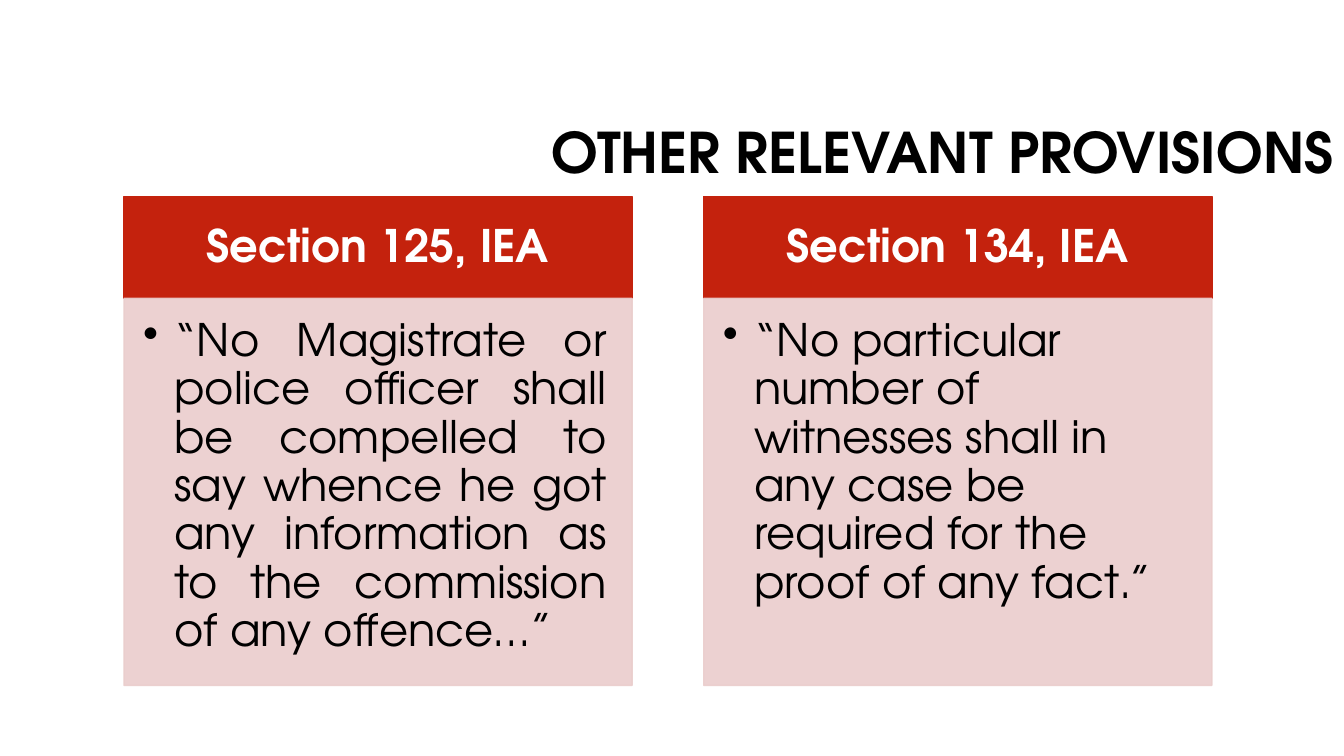
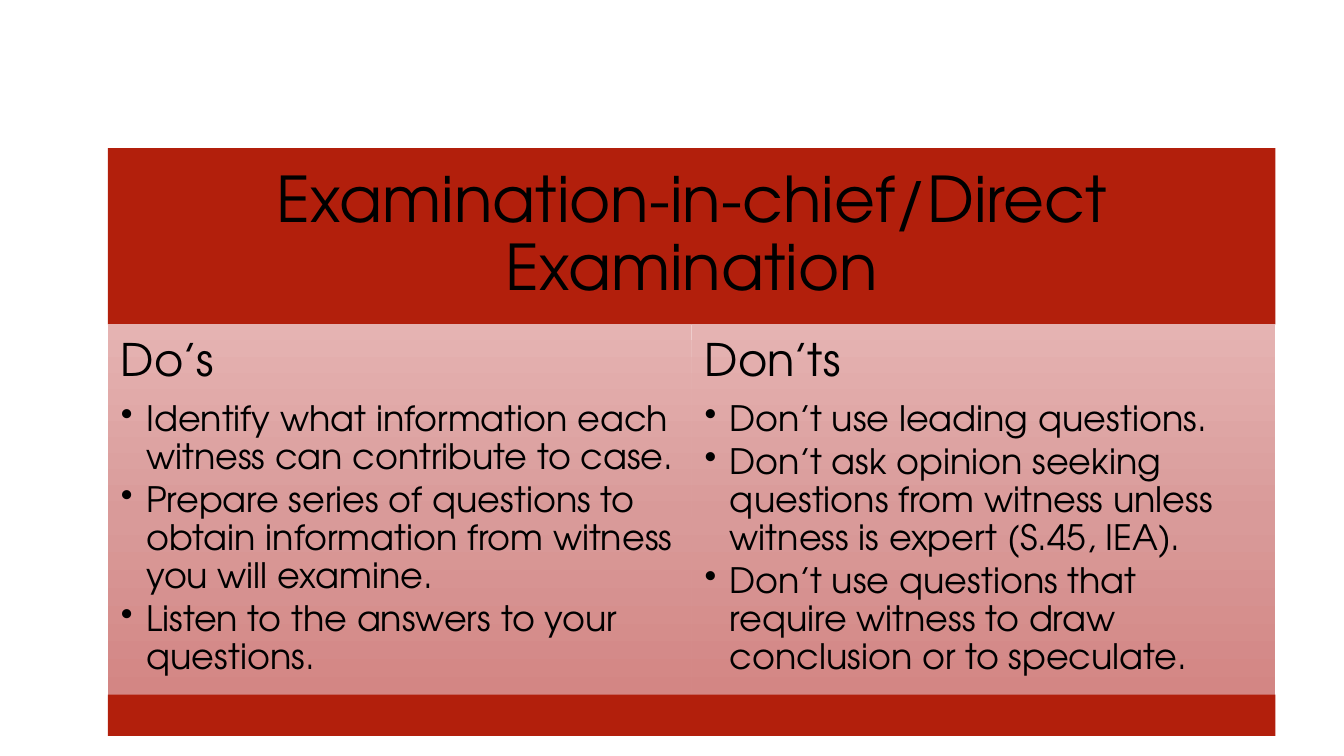
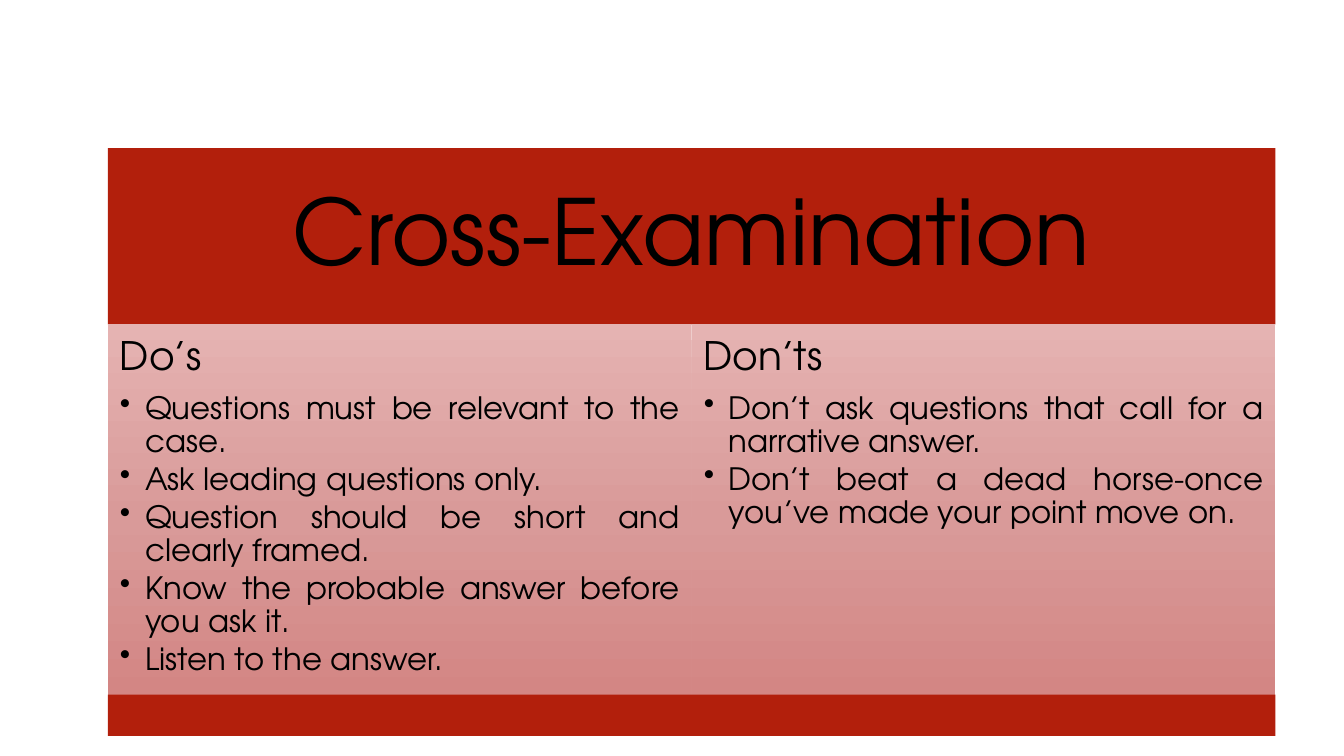
from copy import deepcopy

from lxml import etree
from pptx import Presentation
from pptx.dml.color import RGBColor
from pptx.enum.shapes import MSO_SHAPE
from pptx.enum.text import MSO_ANCHOR, PP_ALIGN
from pptx.oxml.ns import qn
from pptx.util import Inches, Pt

RECTANGLE = MSO_SHAPE.RECTANGLE
TOP, MIDDLE = MSO_ANCHOR.TOP, MSO_ANCHOR.MIDDLE
LEFT, CENTER, RIGHT, JUSTIFY = PP_ALIGN.LEFT, PP_ALIGN.CENTER, PP_ALIGN.RIGHT, PP_ALIGN.JUSTIFY

BLACK = RGBColor(0x00, 0x00, 0x00)
WHITE = RGBColor(0xFF, 0xFF, 0xFF)
HEADER_RED = RGBColor(0xC4, 0x22, 0x0D)
PALE_PINK = RGBColor(0xEA, 0xCD, 0xCC)
BAND_RED = RGBColor(0xB2, 0x1F, 0x0C)
PINK_STOPS = [
    (0, RGBColor(0xE5, 0xB3, 0xB2)),
    (0.52, RGBColor(0xD9, 0x9A, 0x99)),
    (1, RGBColor(0xD3, 0x86, 0x84)),
]
FONT = "TeX Gyre Adventor"
HEADING_SPACE, BULLET_SPACE = 0.35, 0.15

SECTIONS_BOX = (1.23, 1.95, 10.79, 4.85)
PANEL_BOX = (1.07, 1.47, 11.58, 5.83)

SECTIONS = [
    ("Section 125, IEA", JUSTIFY,
     "“No Magistrate or police officer shall be compelled to say whence he got any "
     "information as to the commission of any offence…”"),
    ("Section 134, IEA", LEFT,
     "“No particular number of witnesses shall in any case be required for the proof of any fact.”"),
]
DIRECT_ADVICE = [
    ("Do’s", [
        "Identify what information each witness can contribute to case.",
        "Prepare series of questions to obtain information from witness you will examine.",
        "Listen to the answers to your questions.",
    ]),
    ("Don’ts", [
        "Don’t use leading questions.",
        "Don’t ask opinion seeking questions from witness unless witness is expert (S.45, IEA).",
        "Don’t use questions that require witness to draw conclusion or to speculate.",
    ]),
]
CROSS_ADVICE = [
    ("Do’s", [
        "Questions must be relevant to the case.",
        "Ask leading questions only.",
        "Question should be short and clearly framed.",
        "Know the probable answer before you ask it.",
        "Listen to the answer.",
    ]),
    ("Don’ts", [
        "Don’t ask questions that call for a narrative answer.",
        "Don’t beat a dead horse-once you’ve made your point move on.",
    ]),
]


def add_page(deck):
    """Add a slide on the blank layout."""
    return deck.slides.add_slide(deck.slide_layouts[6])


def add_block(page, box, color=None, outlined=False):
    """Add a flat rectangle, solid when a color is given."""
    block = page.shapes.add_shape(RECTANGLE, *map(Inches, box))
    block.shadow.inherit = False
    if color is not None:
        block.fill.solid()
        block.fill.fore_color.rgb = color
    if outlined:
        block.line.color.rgb = color
        block.line.width = Pt(1)
    else:
        block.line.fill.background()
    return block


def set_gradient(block, stops):
    """Fill a block with color stops running from top to bottom."""
    block.fill.gradient()
    block.fill.gradient_angle = 270
    stop_list = block._element.spPr.find(".//" + qn("a:gsLst"))
    stop_list.insert(1, deepcopy(stop_list[0]))
    for stop, (position, color) in zip(block.fill.gradient_stops, stops):
        stop.position = position
        stop.color.rgb = color


def set_opacity(block, percent):
    """Make the fill and outline of a block partly transparent."""
    for color in block._element.spPr.iter(qn("a:srgbClr")):
        etree.SubElement(color, qn("a:alpha"), val=str(percent * 1000))


def set_frame(block, anchor, insets):
    """Wrap the text of a block and set its anchor and insets; return its frame."""
    frame = block.text_frame
    frame.word_wrap = True
    frame.vertical_anchor = anchor
    frame.margin_left, frame.margin_top, frame.margin_right, frame.margin_bottom = map(Inches, insets)
    return frame


def write(para, text, size, align, space=HEADING_SPACE, color=BLACK, bold=False, indent=0):
    """Write one paragraph, bulleted when an indent is given."""
    para.text = text
    if indent:
        para.level = 1
        properties = para._p.get_or_add_pPr()
        properties.set("marL", str(Inches(indent)))
        properties.set("indent", str(-Inches(indent)))
        etree.SubElement(properties, qn("a:buChar"), char="•")
    para.alignment = align
    para.line_spacing = 0.9
    para.space_after = Pt(round(size * space, 2))
    para.font.name = FONT
    para.font.size = Pt(size)
    para.font.bold = bold
    para.font.color.rgb = color


def add_title(page, text):
    """Add the right-aligned slide title."""
    title = page.shapes.add_textbox(*map(Inches, (3.92, 0.84, 9.41, 1.41)))
    frame = set_frame(title, MIDDLE, (0.1, 0.05, 0.1, 0.05))
    write(frame.paragraphs[0], text, 40, RIGHT, space=0, bold=True)


def add_section(page, box, heading, align, quote):
    """Add a red heading above a pale box with a quoted provision."""
    left, top, width, height = box
    header_height = 1.01
    header = add_block(page, (left, top, width, header_height), HEADER_RED, outlined=True)
    frame = set_frame(header, MIDDLE, (0.25, 0.14, 0.25, 0.14))
    write(frame.paragraphs[0], heading, 32, CENTER, color=WHITE, bold=True)

    body_box = (left, top + header_height, width, height - header_height)
    body = add_block(page, body_box, PALE_PINK, outlined=True)
    set_opacity(body, 90)
    frame = set_frame(body, TOP, (0.19, 0.19, 0.25, 0.28))
    write(frame.paragraphs[0], quote, 32, align, BULLET_SPACE, indent=0.31)


def add_sections(page, box, sections, gap=0.71):
    """Lay out sections as equal columns in the box."""
    left, top, width, height = box
    column_width = (width - gap * (len(sections) - 1)) / len(sections)
    for index, section in enumerate(sections):
        column_left = left + index * (column_width + gap)
        add_section(page, (column_left, top, column_width, height), *section)


def add_advice(page, box, heading, points, sizes, align, inset):
    """Add a gradient column with a heading and bullet points."""
    heading_size, point_size = sizes
    column = add_block(page, box)
    set_gradient(column, PINK_STOPS)
    frame = set_frame(column, TOP, [inset] * 4)
    write(frame.paragraphs[0], heading, heading_size, align)
    for point in points:
        write(frame.add_paragraph(), point, point_size, align, BULLET_SPACE, indent=0.25)


def add_panel(page, box, title, title_size, title_inset, columns, sizes, align, inset):
    """Add a title band, advice columns and a foot band, stacked in the box."""
    left, top, width, height = box
    title_height, body_height, foot_height = (height * share for share in (0.3, 0.63, 0.07))
    band = add_block(page, (left, top, width, title_height), BAND_RED)
    frame = set_frame(band, MIDDLE, [title_inset] * 4)
    write(frame.paragraphs[0], title, title_size, CENTER)

    column_width = width / len(columns)
    for index, (heading, points) in enumerate(columns):
        column_box = (left + index * column_width, top + title_height, column_width, body_height)
        add_advice(page, column_box, heading, points, sizes, align, inset)

    add_block(page, (left, top + title_height + body_height, width, foot_height), BAND_RED)


def main():
    """Build and save the deck."""
    deck = Presentation()
    deck.slide_width, deck.slide_height = Inches(13.33), Inches(7.5)

    page = add_page(deck)
    add_title(page, "OTHER RELEVANT PROVISIONS")
    add_sections(page, SECTIONS_BOX, SECTIONS)

    add_panel(add_page(deck), PANEL_BOX, "Examination-in-chief/Direct Examination", 45, 0.19,
              DIRECT_ADVICE, (32, 25), LEFT, 0.13)
    add_panel(add_page(deck), PANEL_BOX, "Cross-Examination", 65, 0.27,
              CROSS_ADVICE, (28, 22), JUSTIFY, 0.12)

    deck.save("out.pptx")


if __name__ == "__main__":
    main()
